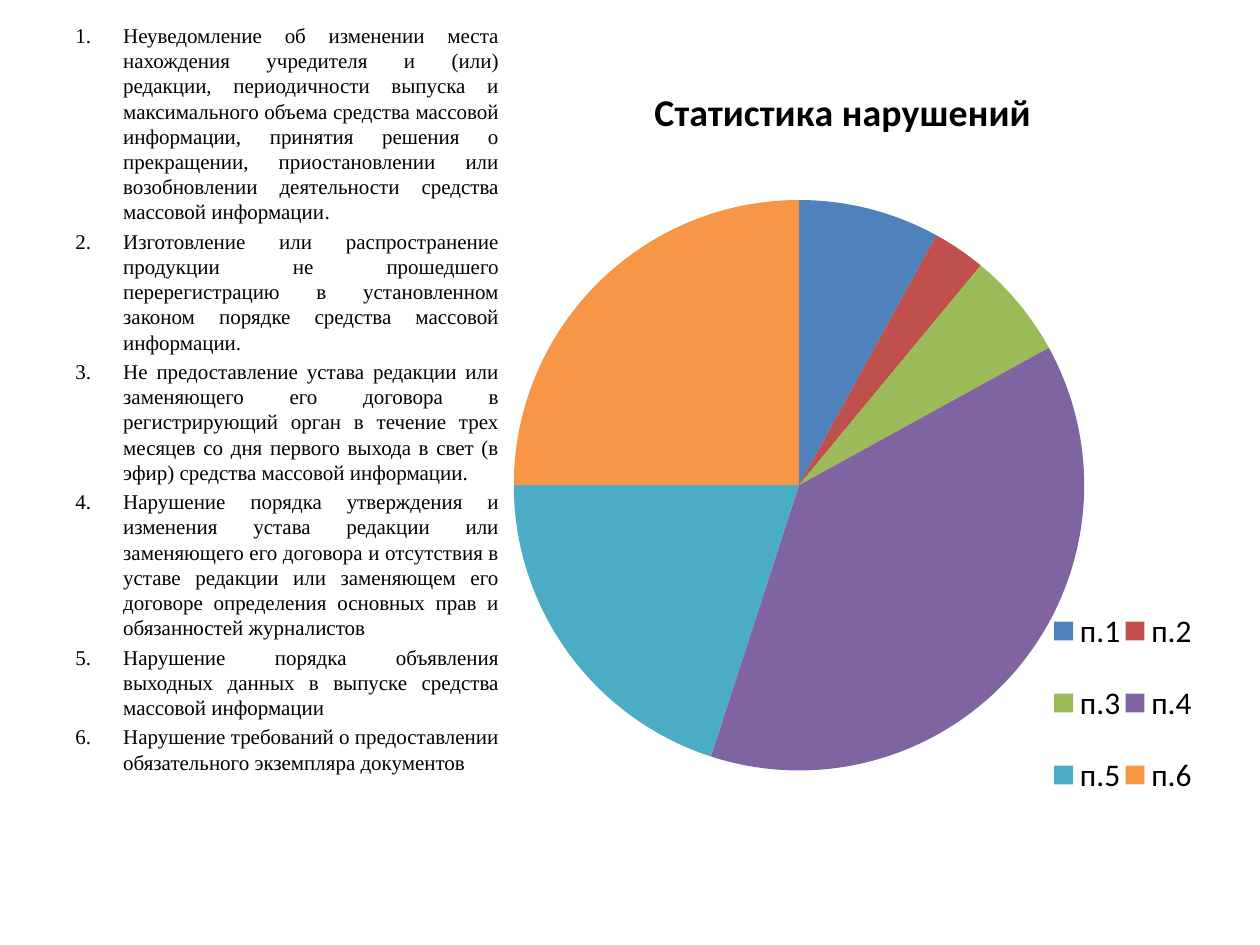
from lxml import etree
from pptx import Presentation
from pptx import util as u
from pptx.chart import data
from pptx.dml import color
from pptx.enum import chart as kinds, text
from pptx.oxml import ns, parse_xml

SERIF, SANS = "Times New Roman", "Calibri"


def paint(target, value):
    target.rgb = color.RGBColor.from_string(value)


def place(element, successors, **fractions):
    """Give a chart part a manual layout in fractions of the chart."""
    for old in element.findall(ns.qn("c:layout")):
        element.remove(old)
    values = {"xMode": "edge", "yMode": "edge", **fractions}
    if "w" in fractions:
        values = {"layoutTarget": "inner", **values}
    layout = parse_xml(
        f"<c:layout {ns.nsdecls('c')}><c:manualLayout>"
        + "".join(f'<c:{name} val="{value}"/>' for name, value in values.items())
        + "</c:manualLayout></c:layout>")
    element.insert_element_before(layout, *successors)


deck = Presentation()
deck.slide_width, deck.slide_height = u.Inches(10), u.Inches(7.5)
page = deck.slides.add_slide(deck.slide_layouts[6])

# Pie chart
title = "Статистика нарушений"
shares = {"п.1": 8, "п.2": 3, "п.3": 6, "п.4": 38, "п.5": 20, "п.6": 25}
colours = ["4F81BD", "C0504D", "9BBB59", "8064A2", "4BACC6", "F79646"]
chart_data = data.CategoryChartData()
chart_data.categories = list(shares)
chart_data.add_series(title, list(shares.values()))
chart = page.shapes.add_chart(
    kinds.XL_CHART_TYPE.PIE, u.Inches(3.91), u.Inches(0.3),
    u.Inches(5.59), u.Inches(6.4), chart_data).chart
for name, value in {"name": SANS, "size": u.Pt(18)}.items():
    setattr(chart.font, name, value)
paint(chart.font.color, "000000")
plot = chart.plots[0]
plot.vary_by_categories = True
for index, colour in enumerate(colours):
    fill = plot.series[0].points[index].format.fill
    fill.solid()
    paint(fill.fore_color, colour)

# Chart title
chart.has_title = True
chart.chart_title.text_frame.text = title
span = chart.chart_title.text_frame.paragraphs[0].runs[0]
for name, value in {"name": SANS, "size": u.Pt(21.6), "bold": True}.items():
    setattr(span.font, name, value)
paint(span.font.color, "000000")

# Legend
chart.has_legend = True
chart.legend.position = kinds.XL_LEGEND_POSITION.RIGHT
chart.legend.include_in_layout = False

# Positions inside the chart
chart_part = chart.element.find(ns.qn("c:chart"))
place(chart_part.find(ns.qn("c:title")), ["c:overlay", "c:spPr", "c:txPr"],
      x=0.22, y=0.05)
place(chart_part.plotArea, ["c:pieChart"], x=0.03, y=0.2, w=0.81, h=0.71)
legend = chart_part.find(ns.qn("c:legend"))
place(legend, ["c:overlay", "c:spPr", "c:txPr"], x=0.79, y=0.67, w=0.21, h=0.31)
target = legend.find(".//" + ns.qn("c:layoutTarget"))
target.getparent().remove(target)

# Numbered list of violations
violations = [
    "Неуведомление об изменении места нахождения учредителя и (или) редакции, "
    "периодичности выпуска и максимального объема средства массовой информации, "
    "принятия решения о прекращении, приостановлении или возобновлении "
    "деятельности средства массовой информации.",
    "Изготовление или распространение продукции не прошедшего перерегистрацию "
    "в установленном законом порядке средства массовой информации.",
    "Не предоставление устава редакции или заменяющего его договора в "
    "регистрирующий орган в течение трех месяцев со дня первого выхода в свет "
    "(в эфир) средства массовой информации.",
    "Нарушение порядка утверждения и изменения устава редакции или заменяющего "
    "его договора и отсутствия в уставе редакции или заменяющем его договоре "
    "определения основных прав и обязанностей журналистов",
    "Нарушение порядка объявления выходных данных в выпуске средства массовой "
    "информации",
    "Нарушение требований о предоставлении обязательного экземпляра документов",
]
box = page.shapes.add_textbox(
    u.Inches(0.5), u.Inches(0.13), u.Inches(3.56), u.Inches(6.57))
frame = box.text_frame
frame.word_wrap = True
for index, violation in enumerate(violations):
    para = frame.paragraphs[0] if index == 0 else frame.add_paragraph()
    para.alignment = text.PP_ALIGN.JUSTIFY
    para.space_before = u.Pt(2.4)
    settings = para._p.get_or_add_pPr()
    settings.set("marL", str(u.Inches(0.38)))
    settings.set("indent", str(u.Inches(-0.38)))
    etree.SubElement(settings, ns.qn("a:buFont"), typeface="+mj-lt")
    etree.SubElement(settings, ns.qn("a:buAutoNum"), type="arabicPeriod")
    # The full stop of the first item is set in the sans font
    pieces = [(violation[:-1], SERIF), (".", SANS)] if index == 0 else [(violation, SERIF)]
    for words, font in pieces:
        span = para.add_run()
        span.text = words
        for name, value in {"name": font, "size": u.Pt(12)}.items():
            setattr(span.font, name, value)
        paint(span.font.color, "000000")

deck.save("out.pptx")
